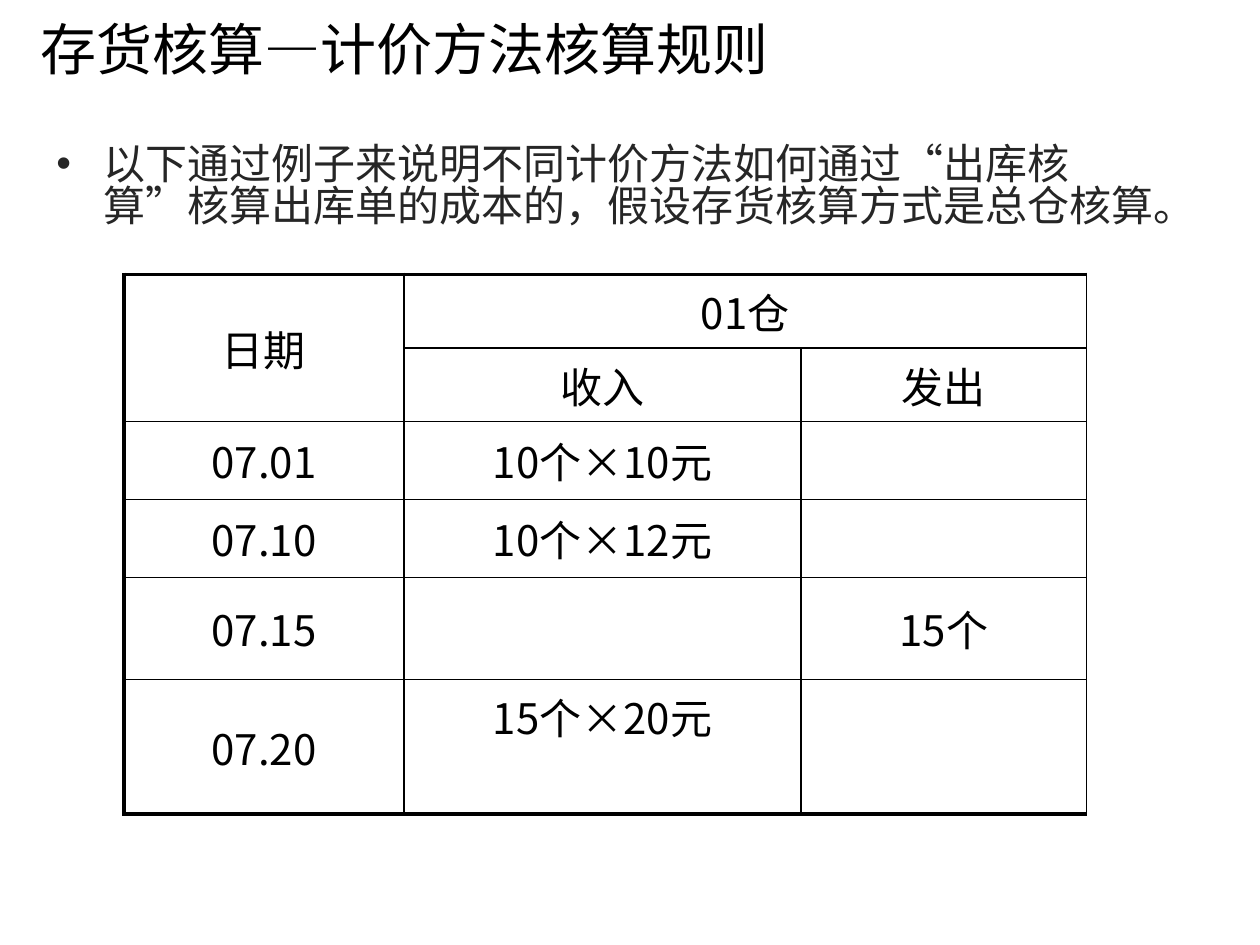
from lxml import etree
from pptx import Presentation
from pptx.dml.color import RGBColor
from pptx.enum.text import MSO_ANCHOR, MSO_AUTO_SIZE, PP_ALIGN
from pptx.oxml.ns import qn
from pptx.util import Pt

LEFT, CENTER = PP_ALIGN.LEFT, PP_ALIGN.CENTER
TOP, MIDDLE = MSO_ANCHOR.TOP, MSO_ANCHOR.MIDDLE
NO_AUTOFIT = MSO_AUTO_SIZE.NONE
TITLE_ONLY = 5

COLORS = {"ink": "000000", "body": "262626"}
THIN, THICK = 1, 2.25


class SlideBuilder:
    font_name = "Noto Sans CJK SC"

    def __init__(self, presentation):
        self.slide = presentation.slides.add_slide(presentation.slide_layouts[TITLE_ONLY])

    def style(self, paragraph, size, color, alignment):
        paragraph.alignment = alignment
        font = paragraph.font
        font.size = Pt(size)
        font.name = self.font_name
        font.color.rgb = RGBColor.from_string(COLORS[color])
        properties = paragraph._p.pPr.find(qn("a:defRPr"))
        east_asian = etree.Element(qn("a:ea"), typeface=self.font_name)
        properties.find(qn("a:latin")).addnext(east_asian)

    def title(self, text, left, top, width, height):
        shape = self.slide.shapes.title
        shape.left, shape.top = Pt(left), Pt(top)
        shape.width, shape.height = Pt(width), Pt(height)
        frame = shape.text_frame
        frame.text = text
        frame.auto_size = NO_AUTOFIT
        frame.vertical_anchor = MIDDLE
        self.style(frame.paragraphs[0], 32, "ink", LEFT)

    def bullet(self, text, left, top, width, height, indent):
        shape = self.slide.shapes.add_textbox(Pt(left), Pt(top), Pt(width), Pt(height))
        frame = shape.text_frame
        frame.word_wrap = True
        frame.margin_top = Pt(7)
        paragraph = frame.paragraphs[0]
        paragraph.text = text
        paragraph.line_spacing = 0.82
        properties = paragraph._p.get_or_add_pPr()
        properties.set("marL", str(Pt(indent)))
        properties.set("indent", str(-Pt(indent)))
        etree.SubElement(properties, qn("a:buFont"), typeface="Arial")
        etree.SubElement(properties, qn("a:buChar"), char="•")
        self.style(paragraph, 24, "body", LEFT)

    def border(self, cell, side, width):
        line = etree.SubElement(cell._tc.get_or_add_tcPr(), qn(f"a:ln{side}"), w=str(Pt(width)))
        fill = etree.SubElement(line, qn("a:solidFill"))
        etree.SubElement(fill, qn("a:srgbClr"), val=COLORS["ink"])

    def table(self, rows, left, top, column_widths, row_heights, merges):
        shape = self.slide.shapes.add_table(
            len(rows), len(column_widths), Pt(left), Pt(top),
            Pt(sum(column_widths)), Pt(sum(row_heights)))
        table = shape.table
        for column, width in zip(table.columns, column_widths):
            column.width = Pt(width)
        for row, height in zip(table.rows, row_heights):
            row.height = Pt(height)
        for start, end in merges:
            table.cell(*start).merge(table.cell(*end))
        last_row = len(rows) - 1
        for row_index, texts in enumerate(rows):
            for column_index, text in enumerate(texts):
                cell = table.cell(row_index, column_index)
                cell.vertical_anchor = MIDDLE
                self.border(cell, "L", THICK if column_index == 0 else THIN)
                self.border(cell, "R", THIN)
                self.border(cell, "T", THICK if row_index == 0 else THIN)
                self.border(cell, "B", THICK if row_index == last_row else THIN)
                cell.fill.background()
                if text:
                    cell.text = text
                    self.style(cell.text_frame.paragraphs[0], 24, "ink", CENTER)
        return table


def main():
    presentation = Presentation()
    presentation.slide_width, presentation.slide_height = Pt(720), Pt(540)
    builder = SlideBuilder(presentation)
    builder.title("存货核算—计价方法核算规则", 15.84, 0, 569.5, 54.7)
    table = builder.table(
        [
            ["日期", "01仓", ""],
            ["", "收入", "发出"],
            ["07.01", "10个×10元", ""],
            ["07.10", "10个×12元", ""],
            ["07.15", "", "15个"],
            ["07.20", "15个×20元", ""],
        ],
        left=70.8, top=156.8,
        column_widths=[160, 227, 163],
        row_heights=[42, 42, 44.6, 44.6, 58.3, 76.8],
        merges=[((0, 0), (1, 0)), ((0, 1), (0, 2))],
    )
    table.cell(5, 1).vertical_anchor = TOP
    builder.bullet(
        "以下通过例子来说明不同计价方法如何通过“出库核算”核算出库单的成本的，假设存货核算方式是总仓核算。",
        25.2, 77, 655.2, 96.5, indent=27)
    presentation.save("out.pptx")


if __name__ == "__main__":
    main()
